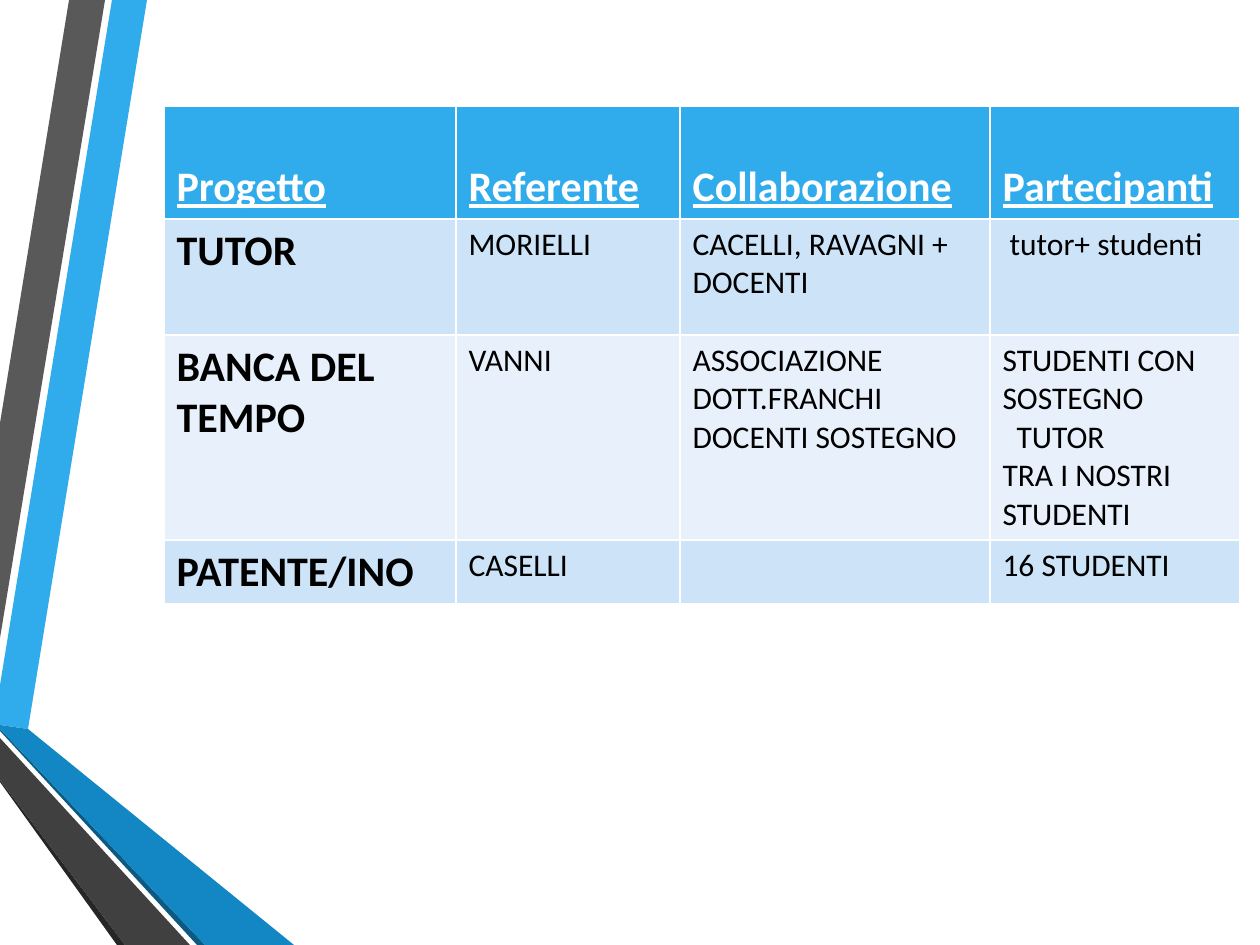
from dataclasses import dataclass

from pptx import Presentation
from pptx.dml.color import RGBColor
from pptx.enum.text import MSO_ANCHOR
from pptx.util import Pt

BOTTOM, TOP = MSO_ANCHOR.BOTTOM, MSO_ANCHOR.TOP
EMU_PER_PX = 914400 / 126
SLIDE_BOX = (0, 0, 1260, 945)
TABLE_BOX = (164, 106, 1076, 497)


@dataclass(frozen=True)
class Theme:
    font: str = "Calibri"
    heading_size: int = 24
    body_size: int = 18
    blue: str = "30ACEC"
    deep_blue: str = "1287C3"
    dark_blue: str = "0C5A82"
    grey: str = "595959"
    dark_grey: str = "404040"
    black_grey: str = "262626"
    band_dark: str = "CDE3F8"
    band_light: str = "E8F1FB"
    white: str = "FFFFFF"
    text: str = "000000"


THEME = Theme()

# Each ribbon: colour and corner points, from back to front
RIBBONS = [
    (THEME.blue, [(0, 685), (0, 725), (28, 729), (147, 0), (112, 0)]),
    (THEME.grey, [(105, 0), (69, 0), (0, 423), (0, 638)]),
    (THEME.black_grey, [(0, 780), (0, 782), (117, 945), (125, 945)]),
    (THEME.dark_blue, [(0, 729), (0, 731), (197, 945), (205, 945)]),
    (THEME.deep_blue, [(0, 729), (205, 945), (294, 945), (28, 729), (0, 725)]),
    (THEME.dark_grey, [(0, 780), (125, 945), (190, 945), (0, 738)]),
]

# Each cell is a list of paragraphs
PROJECTS = [
    [["Progetto"], ["Referente"], ["Collaborazione"], ["Partecipanti"]],
    [["TUTOR"], ["MORIELLI"], ["CACELLI, RAVAGNI + DOCENTI"], [" tutor+ studenti"]],
    [["BANCA DEL TEMPO"], ["VANNI"],
     ["ASSOCIAZIONE", "DOTT.FRANCHI", "DOCENTI SOSTEGNO"],
     ["STUDENTI CON SOSTEGNO", "TUTOR", "TRA I NOSTRI STUDENTI"]],
    [["PATENTE/INO"], ["CASELLI"], [], ["16 STUDENTI"]],
]
INDENTS = {(2, 3, 1): 14}  # row, column, paragraph: indent in px
COLUMN_WIDTHS = [292, 224, 310, 250]
ROW_HEIGHTS = [113, 116, 205, 63]


def px(length):
    return round(length * EMU_PER_PX)


def rgb(value):
    return RGBColor.from_string(value)


def add_ribbons(slide, box):
    left, top = box[:2]
    for colour, points in RIBBONS:
        builder = slide.shapes.build_freeform(*points[0], scale=EMU_PER_PX)
        builder.add_line_segments(points[1:], close=True)
        ribbon = builder.convert_to_shape(px(left), px(top))
        ribbon.fill.solid()
        ribbon.fill.fore_color.rgb = rgb(colour)
        ribbon.line.fill.background()
        ribbon.shadow.inherit = False


def fill_cell(cell, row, column, lines):
    is_header = row == 0
    is_heading = is_header or column == 0
    band = THEME.band_dark if row % 2 else THEME.band_light
    cell.fill.solid()
    cell.fill.fore_color.rgb = rgb(THEME.blue if is_header else band)
    cell.vertical_anchor = BOTTOM if is_header else TOP

    for index, line in enumerate(lines):
        frame = cell.text_frame
        paragraph = frame.add_paragraph() if index else frame.paragraphs[0]
        indent = INDENTS.get((row, column, index))
        if indent:
            paragraph._p.get_or_add_pPr().set("marL", str(px(indent)))
        run = paragraph.add_run()
        run.text = line
        font = run.font
        font.name = THEME.font
        font.size = Pt(THEME.heading_size if is_heading else THEME.body_size)
        font.bold = is_heading
        font.underline = is_header
        font.color.rgb = rgb(THEME.white if is_header else THEME.text)


def add_projects_table(slide, box):
    frame = slide.shapes.add_table(
        len(PROJECTS), len(COLUMN_WIDTHS), *(px(length) for length in box))
    projects = frame.table
    for column, width in zip(projects.columns, COLUMN_WIDTHS):
        column.width = px(width)
    for row, height in zip(projects.rows, ROW_HEIGHTS):
        row.height = px(height)
    for r, cells in enumerate(PROJECTS):
        for c, lines in enumerate(cells):
            fill_cell(projects.cell(r, c), r, c, lines)


def main():
    prs = Presentation()
    prs.slide_width, prs.slide_height = px(SLIDE_BOX[2]), px(SLIDE_BOX[3])
    slide = prs.slides.add_slide(prs.slide_layouts[6])  # blank: no title here
    add_ribbons(slide, SLIDE_BOX)
    add_projects_table(slide, TABLE_BOX)
    prs.save("out.pptx")


if __name__ == "__main__":
    main()
